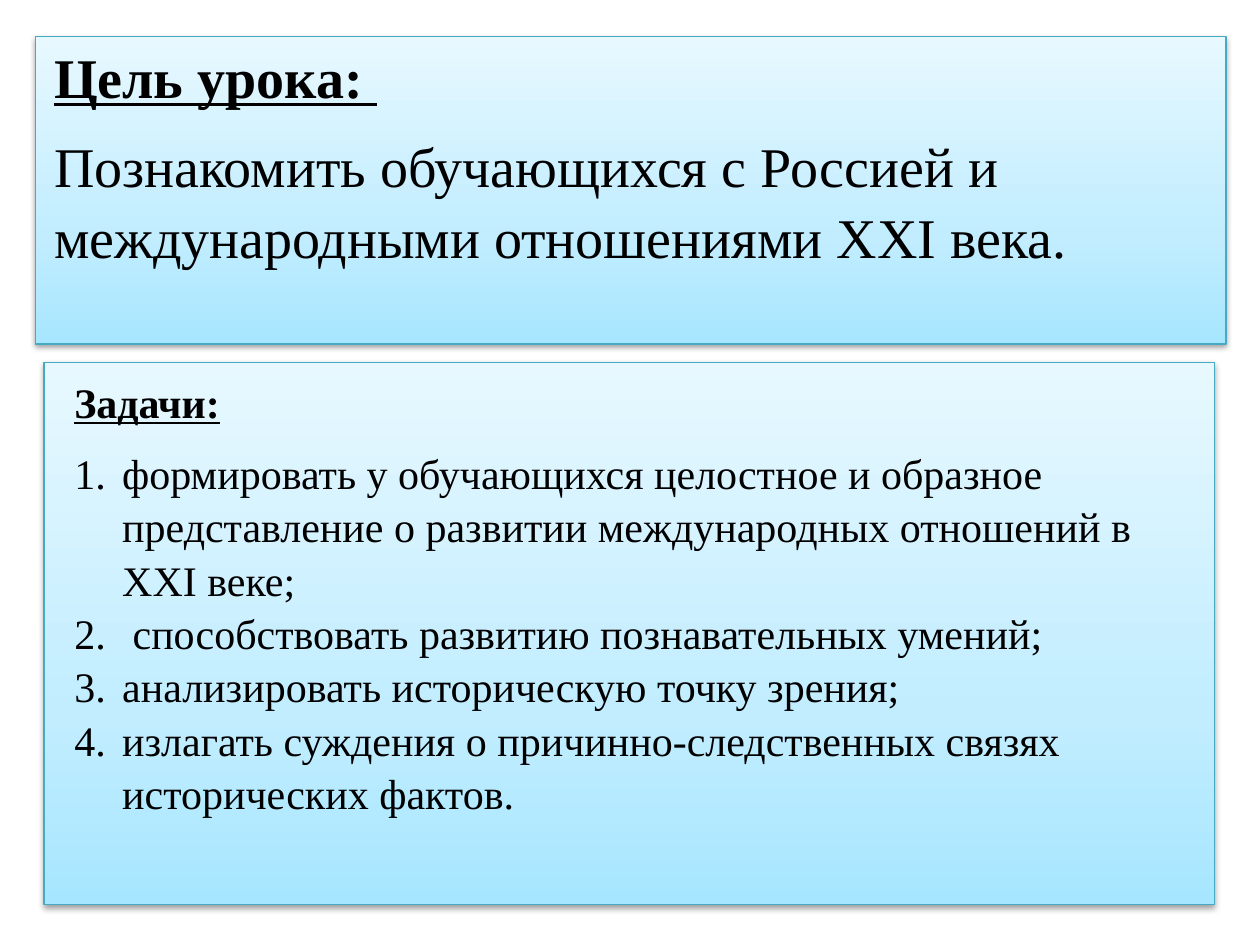
from dataclasses import dataclass

from lxml import etree
from pptx import Presentation
from pptx.dml.color import RGBColor
from pptx.enum.shapes import MSO_SHAPE
from pptx.oxml.ns import qn
from pptx.util import Inches, Pt

RECTANGLE = MSO_SHAPE.RECTANGLE
BLANK_LAYOUT = 6


@dataclass(frozen=True)
class Theme:
    font: str = "Times New Roman"
    ink: str = "000000"
    border: str = "46AAC5"
    gradient: tuple = ((0, "A7E6FF"), (35, "C1EDFF"), (100, "E7F8FF"))
    goal_size: int = 32
    task_size: int = 24
    line_spacing: float = 1.15
    space_after: int = 10


def add_element(parent, tag, **attributes):
    return etree.SubElement(parent, qn(tag), attributes)


class SlideBuilder:
    def __init__(self, slide, theme):
        self.slide = slide
        self.theme = theme

    def panel(self, left, top, width, height):
        """Add a gradient rectangle with a soft shadow below it."""
        box = self.slide.shapes.add_shape(
            RECTANGLE, Inches(left), Inches(top), Inches(width), Inches(height))
        box.line.color.rgb = RGBColor.from_string(self.theme.border)
        box.line.width = Pt(0.75)

        # Gradient running from bottom to top
        box.fill.gradient()
        box.fill.gradient_angle = 90
        properties = box._element.spPr
        stops = properties.find(qn("a:gradFill")).find(qn("a:gsLst"))
        for stop in list(stops):
            stops.remove(stop)
        for percent, color in self.theme.gradient:
            stop = add_element(stops, "a:gs", pos=str(percent * 1000))
            add_element(stop, "a:srgbClr", val=color)

        # Shadow
        box.shadow.inherit = False
        shadow = add_element(
            properties.find(qn("a:effectLst")), "a:outerShdw",
            blurRad=str(Pt(3.1)), dist=str(Pt(1.6)), dir="5400000", rotWithShape="0")
        color = add_element(shadow, "a:srgbClr", val=self.theme.ink)
        add_element(color, "a:alpha", val="38000")

    def text_table(self, left, top, width, height):
        """Add a one-cell table without fill or borders; return its text frame."""
        table = self.slide.shapes.add_table(
            1, 1, Inches(left), Inches(top), Inches(width), Inches(height)).table
        table.first_row = False
        table.horz_banding = False
        cell = table.cell(0, 0)
        cell.margin_left = cell.margin_right = Inches(0.12)
        cell.margin_top = cell.margin_bottom = 0
        cell_properties = cell._tc.get_or_add_tcPr()
        for side in ("a:lnL", "a:lnR", "a:lnT", "a:lnB"):
            add_element(add_element(cell_properties, side, w="0"), "a:noFill")
        cell.fill.background()
        return cell.text_frame

    def paragraph(self, frame, text, size, heading=False, numbered=False, gap=True):
        """Fill the empty first paragraph, or add one after the others."""
        first = frame.paragraphs[0]
        para = frame.add_paragraph() if first.runs else first
        para.add_run().text = text
        para.line_spacing = self.theme.line_spacing
        para.space_after = Pt(self.theme.space_after if gap else 0)
        para.font.name = self.theme.font
        para.font.size = Pt(size)
        para.font.bold = para.font.underline = heading
        para.font.color.rgb = RGBColor.from_string(self.theme.ink)
        # Runs carry the same font, since table cells may ignore paragraph defaults
        span = para.runs[0]
        span.font.name = self.theme.font
        span.font.size = Pt(size)
        span.font.bold = span.font.underline = heading
        span.font.color.rgb = RGBColor.from_string(self.theme.ink)
        if numbered:
            properties = para._p.get_or_add_pPr()
            properties.set("marL", str(Inches(0.38)))
            properties.set("indent", str(Inches(-0.38)))
            number = etree.Element(qn("a:buAutoNum"), type="arabicPeriod")
            properties.find(qn("a:defRPr")).addprevious(number)


def main():
    deck = Presentation()
    deck.slide_width = Inches(10)
    deck.slide_height = Inches(7.5)
    theme = Theme()
    page = SlideBuilder(deck.slides.add_slide(deck.slide_layouts[BLANK_LAYOUT]), theme)

    # Background panels
    page.panel(0.28, 0.29, 9.45, 2.44)
    page.panel(0.35, 2.88, 9.29, 4.3)

    # Lesson goal
    goal = page.text_table(0.31, 0.31, 9.38, 1.98)
    page.paragraph(goal, "Цель урока: ", theme.goal_size, heading=True)
    page.paragraph(
        goal,
        "Познакомить обучающихся с Россией и международными отношениями XXI века.",
        theme.goal_size)

    # Lesson tasks
    tasks = (
        "формировать у обучающихся целостное и образное представление "
        "о развитии международных отношений в XXI веке;",
        " способствовать развитию познавательных умений;",
        "анализировать историческую точку зрения;",
        "излагать суждения о причинно-следственных связях исторических фактов.",
    )
    task_list = page.text_table(0.47, 2.97, 9.06, 3.82)
    page.paragraph(task_list, "Задачи:", theme.task_size, heading=True)
    for task in tasks:
        page.paragraph(task_list, task, theme.task_size, numbered=True,
                       gap=task == tasks[-1])

    deck.save("out.pptx")


if __name__ == "__main__":
    main()
